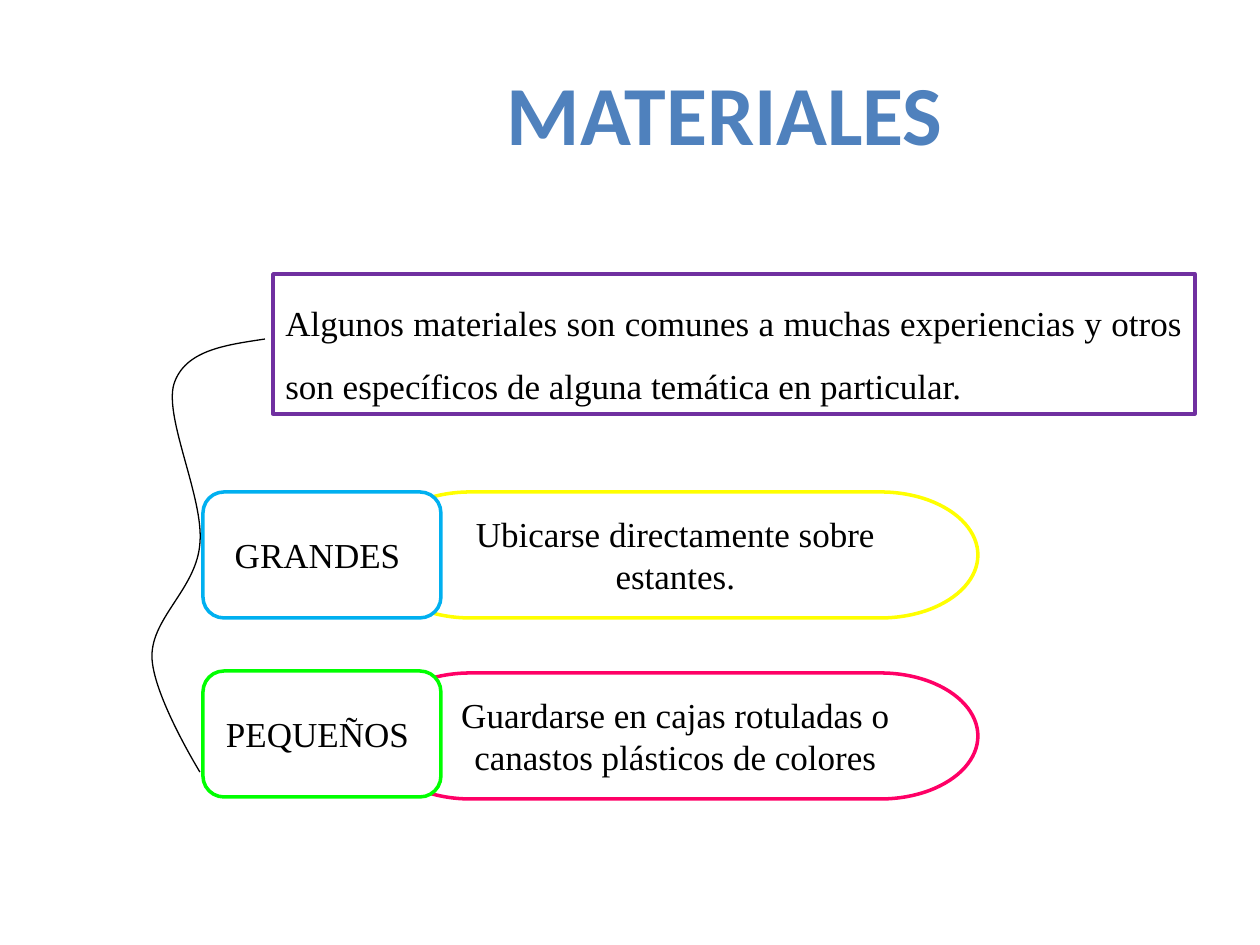
"""Build the MATERIALES slide: an introduction, two sizes of material and a joining curve."""
from dataclasses import dataclass

from lxml import etree
from pptx import Presentation, util as u
from pptx.dml.color import RGBColor
from pptx.enum import shapes, text
from pptx.oxml import ns

TITLE = "MATERIALES "
INTRO = ("Algunos materiales son comunes a muchas experiencias "
         "y otros son específicos de alguna temática en particular.")
SIZES = [
    dict(label="GRANDES ", label_top=492, label_line="00B0F0",
         advice="Ubicarse directamente sobre estantes.", advice_top=492, advice_line="FFFF00"),
    dict(label="PEQUEÑOS ", label_top=671, label_line="00FF00",
         advice="Guardarse en cajas rotuladas o canastos plásticos de colores",
         advice_top=673, advice_line="FF0066"),
]
CURVE_START = (265, 339)
CURVE = [
    [(226, 345), (185, 350), (174, 384)],
    [(164, 418), (204, 498), (200, 543)],
    [(197, 588), (152, 617), (152, 656)],
    [(152, 694), (200, 772), (200, 772)],
]
PX = 914400 / 126


@dataclass(frozen=True)
class Theme:
    heading_font: str = "Calibri"
    body_font: str = "Times New Roman"
    heading_size: int = 48
    body_size: int = 20
    heading: str = "4F81BD"
    ink: str = "000000"
    paper: str = "FFFFFF"
    intro_line: str = "7030A0"
    outline: float = 2
    curve: float = 0.75


THEME = Theme()


def px(*lengths):
    return [u.Emu(round(length * PX)) for length in lengths]


def write(frame, words, font=THEME.body_font, size=THEME.body_size, color=THEME.ink,
          bold=False, align=text.PP_ALIGN.CENTER, anchor=text.MSO_ANCHOR.MIDDLE,
          spacing=None, wrap=True):
    frame.word_wrap = wrap
    frame.vertical_anchor = anchor
    paragraph = frame.paragraphs[0]
    paragraph.alignment = align
    paragraph.line_spacing = spacing
    run = paragraph.add_run()
    run.text = words
    run.font.name, run.font.size, run.font.bold = font, u.Pt(size), bold
    run.font.color.rgb = RGBColor.from_string(color)


def add_box(slide, kind, place, line, words, **style):
    box = slide.shapes.add_shape(kind, *px(*place))
    box.shadow.inherit = False
    box.fill.solid()
    box.fill.fore_color.rgb = RGBColor.from_string(THEME.paper)
    box.line.color.rgb = RGBColor.from_string(line)
    box.line.width = u.Pt(THEME.outline)
    write(box.text_frame, words, **style)


def add_curve(slide, start, segments):
    ends = [start] + [segment[-1] for segment in segments]
    left, top = (min(values) for values in zip(*ends))
    builder = slide.shapes.build_freeform(*start, scale=PX)
    builder.add_line_segments(ends[1:], close=False)
    curve = builder.convert_to_shape()
    curve.shadow.inherit = False
    curve.fill.background()
    curve.line.color.rgb = RGBColor.from_string(THEME.ink)
    curve.line.width = u.Pt(THEME.curve)
    steps = list(curve.element.iter(ns.qn("a:lnTo")))
    for step, segment in zip(steps, segments):
        bezier = etree.Element(ns.qn("a:cubicBezTo"))
        for x, y in segment:
            etree.SubElement(bezier, ns.qn("a:pt"), x=str(x - left), y=str(y - top))
        step.getparent().replace(step, bezier)


def main():
    deck = Presentation()
    deck.slide_width, deck.slide_height = px(1260, 945)
    slide = deck.slides.add_slide(deck.slide_layouts[6])
    kinds = shapes.MSO_SHAPE
    for size in reversed(SIZES):
        add_box(slide, kinds.FLOWCHART_TERMINATOR, (373, size["advice_top"], 605, 126),
                size["advice_line"], size["advice"])
    title = slide.shapes.add_textbox(*px(491, 55, 487, 115))
    write(title.text_frame, TITLE, font=THEME.heading_font, size=THEME.heading_size,
          color=THEME.heading, bold=True, anchor=text.MSO_ANCHOR.TOP, wrap=False)
    add_box(slide, kinds.RECTANGLE, (273, 274, 922, 140), THEME.intro_line, INTRO,
            align=text.PP_ALIGN.JUSTIFY, anchor=text.MSO_ANCHOR.TOP, spacing=1.5)
    for size in SIZES:
        add_box(slide, kinds.ROUNDED_RECTANGLE, (203, size["label_top"], 238, 126),
                size["label_line"], size["label"])
    add_curve(slide, CURVE_START, CURVE)
    deck.save("out.pptx")


if __name__ == "__main__":
    main()
